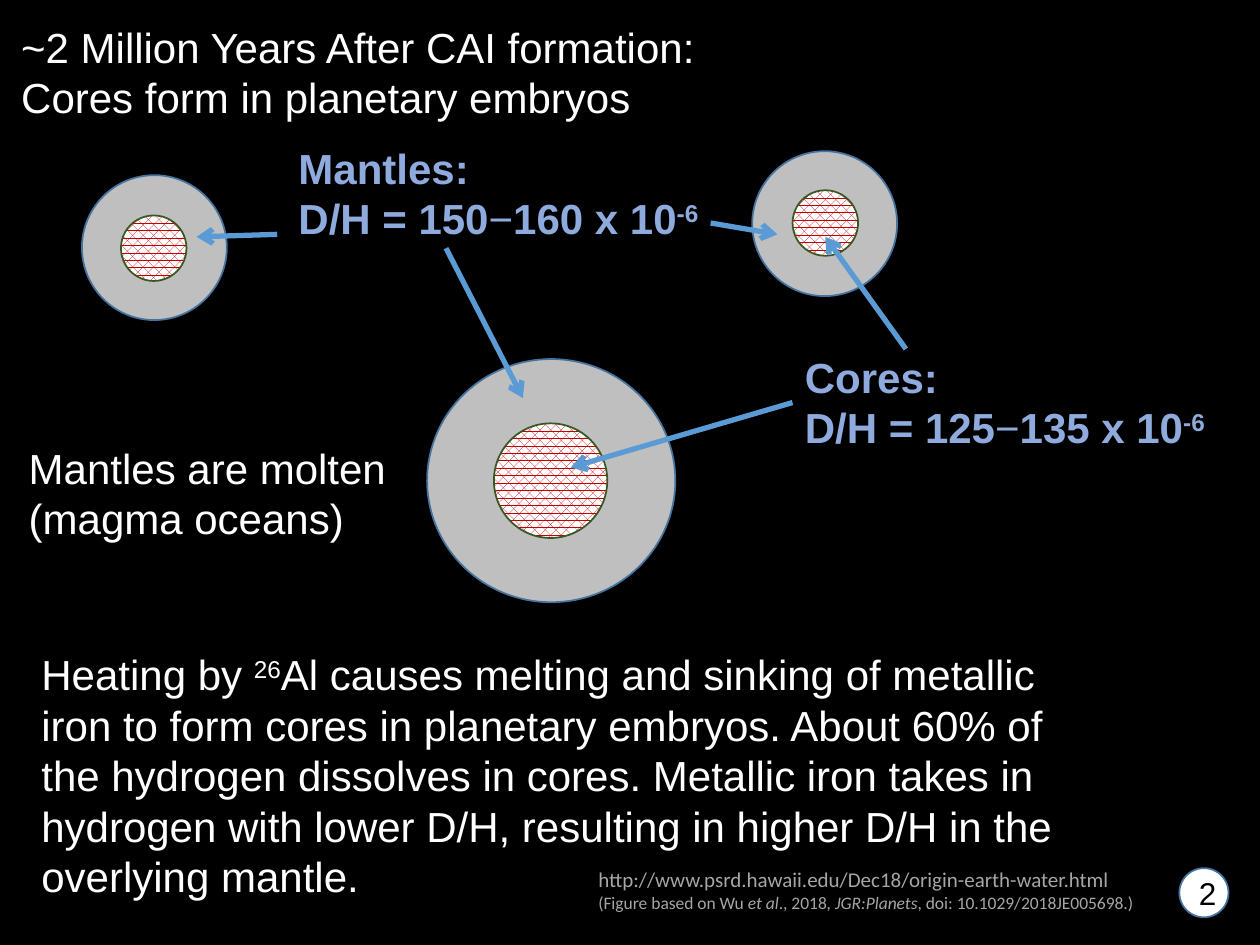
from typing import NamedTuple, Optional

from lxml import etree
from pptx import Presentation
from pptx import util as u
from pptx.dml.color import RGBColor
from pptx.enum import dml, shapes, text
from pptx.oxml import ns

WHITE, BLACK, GREY = "FFFFFF", "000000", "A6A6A6"
MANTLE, CORE_RED, CORE_EDGE = "BFBFBF", "C00000", "385723"
LABEL, ARROW, EDGE = "8FAADC", "5B9BD5", "43739E"


class Box(NamedTuple):
    left: float
    top: float
    width: float
    height: float


class Run(NamedTuple):
    words: str
    size: float = 24
    color: str = WHITE
    font: str = "Arial"
    bold: bool = False
    italic: bool = False
    raised: bool = False


class Embryo(NamedTuple):
    mantle: Box
    core: Box


class Arrow(NamedTuple):
    start: tuple[float, float]
    end: tuple[float, float]
    source: Optional[str] = None  # label whose left side the arrow leaves


class Note(NamedTuple):
    name: str
    box: Box
    paragraphs: list[list[Run]]
    wrap: bool = True


def rgb(value: str) -> RGBColor:
    return RGBColor.from_string(value)


def add_run(p, run: Run) -> None:
    r = p.add_run()
    r.text = run.words
    r.font.name, r.font.size = run.font, u.Pt(run.size)
    r.font.bold, r.font.italic = run.bold, run.italic
    r.font.color.rgb = rgb(run.color)
    if run.raised:
        r._r.get_or_add_rPr().set("baseline", "30000")


def add_circle(parent, box: Box, fill: str, edge: str = EDGE):
    sp = parent.add_shape(shapes.MSO_SHAPE.OVAL, *map(u.Inches, box))
    sp.shadow.inherit = False
    sp.fill.solid()
    sp.fill.fore_color.rgb = rgb(fill)
    sp.line.color.rgb = rgb(edge)
    sp.line.width = u.Pt(1)
    return sp


def add_embryo(s, embryo: Embryo) -> None:
    group = s.shapes.add_group_shape().shapes
    add_circle(group, embryo.mantle, MANTLE)
    core = add_circle(group, embryo.core, WHITE, CORE_EDGE)
    core.fill.patterned()
    core.fill.pattern = dml.MSO_PATTERN.PERCENT_60
    core.fill.fore_color.rgb = rgb(CORE_RED)
    core.fill.back_color.rgb = rgb(WHITE)


def add_note(s, note: Note):
    sp = s.shapes.add_textbox(*map(u.Inches, note.box))
    tf = sp.text_frame
    tf.word_wrap = note.wrap
    tf.auto_size = text.MSO_AUTO_SIZE.SHAPE_TO_FIT_TEXT
    for i, runs in enumerate(note.paragraphs):
        p = tf.add_paragraph() if i else tf.paragraphs[0]
        for run in runs:
            add_run(p, run)
    return sp


def add_arrow(s, arrow: Arrow, notes: dict) -> None:
    line = s.shapes.add_connector(
        shapes.MSO_CONNECTOR.STRAIGHT, *map(u.Inches, arrow.start + arrow.end))
    if arrow.source:
        line.begin_connect(notes[arrow.source], 1)
    line.line.color.rgb = rgb(ARROW)
    line.line.width = u.Pt(3)
    etree.SubElement(line.line._get_or_add_ln(), ns.qn("a:tailEnd"), type="arrow")
    etree.SubElement(line._element.spPr, ns.qn("a:effectLst"))


def ratio_label(title: str, low: str, high: str) -> list[list[Run]]:
    def bold(words: str, raised: bool = False) -> Run:
        return Run(words, color=LABEL, bold=True, raised=raised)

    return [[bold(title)],
            [bold(f"D/H = {low}"), Run("−", color=LABEL),
             bold(f"{high} x 10"), bold("-6", raised=True)]]


def credit(words: str, size: float = 10, italic: bool = False) -> Run:
    return Run(words, size, GREY, "Calibri", italic=italic)


EMBRYOS = [
    Embryo(Box(3.39, 2.85, 1.97, 1.93), Box(3.92, 3.36, 0.9, 0.91)),
    Embryo(Box(0.65, 1.39, 1.15, 1.15), Box(0.96, 1.71, 0.52, 0.52)),
    Embryo(Box(5.97, 1.2, 1.15, 1.15), Box(6.29, 1.51, 0.52, 0.52)),
]

NOTES = [
    Note("title", Box(0.07, 0.12, 5.6, 0.91), [
        [Run("~2 Million Years After CAI formation:")],
        [Run("Cores form in planetary embryos")]], wrap=False),
    Note("explanation", Box(0.23, 5.1, 8.28, 2.12), [[
        Run("Heating by "), Run("26", raised=True),
        Run("Al causes melting and sinking of metallic iron to form cores in "
            "planetary embryos. About 60% of the hydrogen dissolves in cores. "
            "Metallic iron takes in hydrogen with lower D/H, resulting in "
            "higher D/H in the overlying mantle.")]]),
    Note("cores", Box(6.29, 2.74, 3.46, 0.91), ratio_label("Cores:", "125", "135")),
    Note("mantles", Box(2.27, 1.08, 3.42, 0.91), ratio_label("Mantles:", "150", "160")),
    Note("molten", Box(0.13, 3.46, 3.14, 0.91), [
        [Run("Mantles are molten")], [Run("(magma oceans)")]]),
    Note("credit", Box(4.65, 6.83, 4.6, 0.47), [
        [credit("http://www.psrd.hawaii.edu/Dec18/origin-earth-water.html", 12)],
        [credit("(Figure based on Wu "), credit("et al", italic=True),
         credit("., 2018"), credit(", JGR:Planets", italic=True),
         credit(", doi: 10.1029/2018JE005698.)")]]),
]

ARROWS = [
    # From the cores label
    Arrow((6.29, 3.2), (4.53, 3.71), source="cores"),
    Arrow((7.19, 2.77), (6.55, 1.88)),
    # From the mantles label
    Arrow((3.54, 1.97), (4.15, 3.16)),
    Arrow((2.2, 1.86), (1.56, 1.88)),
    Arrow((5.64, 1.77), (6.17, 1.86)),
]


def main() -> None:
    prs = Presentation()
    prs.slide_width, prs.slide_height = u.Inches(10), u.Inches(7.5)
    s = prs.slides.add_slide(prs.slide_layouts[6])
    s.background.fill.solid()
    s.background.fill.fore_color.rgb = rgb(BLACK)

    # Planetary embryos
    for embryo in EMBRYOS:
        add_embryo(s, embryo)

    # Texts, then the arrows that leave them
    notes = {note.name: add_note(s, note) for note in NOTES}
    for arrow in ARROWS:
        add_arrow(s, arrow, notes)

    # Page number
    badge = add_circle(s.shapes, Box(9.36, 6.89, 0.39, 0.39), WHITE)
    tf = badge.text_frame
    tf.vertical_anchor = text.MSO_ANCHOR.MIDDLE
    p = tf.paragraphs[0]
    p.alignment = text.PP_ALIGN.CENTER
    add_run(p, Run("2", 18, BLACK))

    prs.save("out.pptx")


if __name__ == "__main__":
    main()
